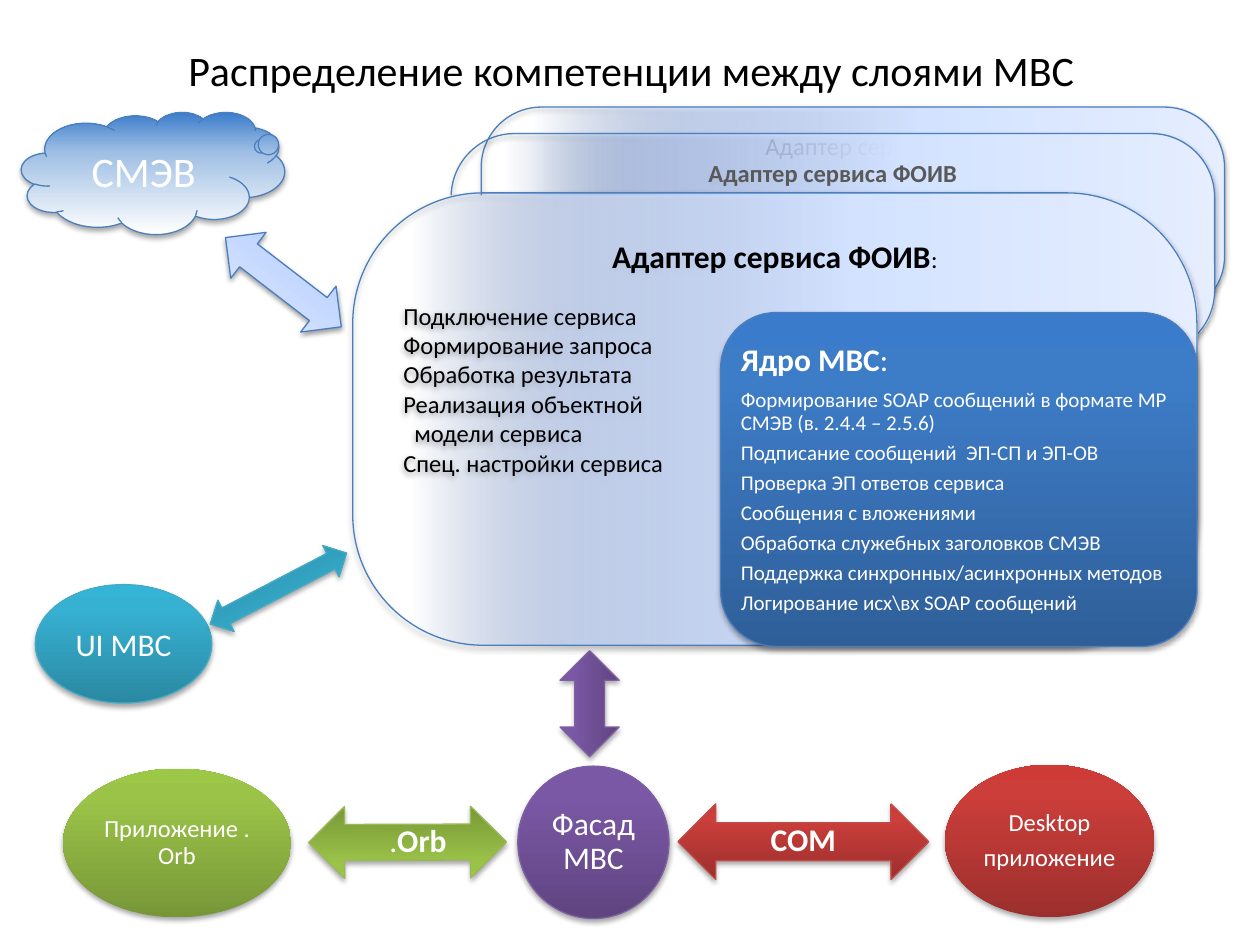
from dataclasses import dataclass

import lxml.etree
import pptx
import pptx.dml.color
import pptx.enum.shapes
import pptx.enum.text
import pptx.oxml.ns
import pptx.util

Pt = pptx.util.Pt
RGBColor = pptx.dml.color.RGBColor
Kind = pptx.enum.shapes.MSO_SHAPE
Anchor = pptx.enum.text.MSO_ANCHOR
Align = pptx.enum.text.PP_ALIGN
qn = pptx.oxml.ns.qn

FONT = "Calibri"
BLACK = RGBColor(0x00, 0x00, 0x00)
GRAY = RGBColor(0x59, 0x59, 0x59)
WHITE = RGBColor(0xFF, 0xFF, 0xFF)
BLUE_LINE = RGBColor(0x4B, 0x7E, 0xBC)
TEAL_LINE = RGBColor(0x46, 0xAA, 0xC5)
PURPLE_LINE = RGBColor(0x7D, 0x60, 0xA0)
RED_LINE = RGBColor(0xBF, 0x4C, 0x48)
GREEN_LINE = RGBColor(0x98, 0xB9, 0x55)
BLUE_DARK, BLUE, BLUE_LIGHT = (RGBColor.from_string(c) for c in ("2F5F99", "3D7CC7", "3A7CCB"))
TEAL_DARK, TEAL, TEAL_LIGHT = (RGBColor.from_string(c) for c in ("2A88A2", "37B1D2", "34B4D6"))
PURPLE_DARK, PURPLE, PURPLE_LIGHT = (RGBColor.from_string(c) for c in ("5F4480", "7B58A6", "7C57A8"))
RED_DARK, RED, RED_LIGHT = (RGBColor.from_string(c) for c in ("9C2F2D", "CB3E3A", "CE3B37"))
GREEN_DARK, GREEN, GREEN_LIGHT = (RGBColor.from_string(c) for c in ("779737", "9BC348", "9DC746"))
SKY, PALE, PALER, PALEST, CLOUD = (
    RGBColor.from_string(c) for c in ("A4C4FF", "BFD4FF", "D2E2FF", "E6EEFF", "A0BFE4"))


@dataclass(frozen=True)
class Stop:
    percent: int
    color: RGBColor
    opacity: int = 100


@dataclass(frozen=True)
class Look:
    stops: tuple[Stop, ...]
    line: RGBColor | None
    angle: int = 270
    shadow_opacity: int = 35
    shadow_distance: float = 1.8


@dataclass(frozen=True)
class Span:
    text: str
    size: float
    color: RGBColor = WHITE
    bold: bool = False


@dataclass(frozen=True)
class Para:
    spans: tuple[Span, ...]
    align: Align = Align.CENTER
    tight: bool = False
    after: float = 0
    indent: float = 0


@dataclass(frozen=True)
class Node:
    kind: Kind
    frame: tuple[float, float, float, float]
    look: Look
    paras: tuple[Para, ...] = ()
    adjust: tuple[float, ...] = ()
    rotation: float = 0
    anchor: Anchor = Anchor.MIDDLE
    insets: tuple[float, float, float, float] = (7.2, 3.6, 7.2, 3.6)


def solid_look(dark: RGBColor, middle: RGBColor, light: RGBColor,
               line: RGBColor | None, angle: int = 270) -> Look:
    return Look((Stop(0, dark), Stop(80, middle), Stop(100, light)), line, angle)


def tight(*spans: Span, align: Align = Align.CENTER) -> Para:
    return Para(spans, align, tight=True, after=round(0.35 * spans[0].size, 2))


def add_color(parent, color: RGBColor, opacity: int) -> None:
    element = lxml.etree.SubElement(parent, qn("a:srgbClr"), val=str(color))
    if opacity < 100:
        lxml.etree.SubElement(element, qn("a:alpha"), val=str(opacity * 1000))


def apply_look(shape, look: Look) -> None:
    # Gradient
    shape.fill.gradient()
    gradient = shape._element.spPr.find(qn("a:gradFill"))
    stop_list = gradient.find(qn("a:gsLst"))
    for old in list(stop_list):
        stop_list.remove(old)
    for stop in look.stops:
        element = lxml.etree.SubElement(stop_list, qn("a:gs"), pos=str(stop.percent * 1000))
        add_color(element, stop.color, stop.opacity)
    gradient.find(qn("a:lin")).set("ang", str(look.angle * 60000))
    # Outline
    if look.line is None:
        shape.line.fill.background()
    else:
        shape.line.color.rgb = look.line
        shape.line.width = Pt(0.75)
    # Shadow
    shape.shadow.inherit = False
    effects = shape._element.spPr.find(qn("a:effectLst"))
    shadow = lxml.etree.SubElement(
        effects, qn("a:outerShdw"), blurRad=str(Pt(3.1)),
        dist=str(Pt(look.shadow_distance)), dir="5400000", rotWithShape="0")
    add_color(shadow, BLACK, look.shadow_opacity)


def write(text_frame, paras: tuple[Para, ...], anchor: Anchor) -> None:
    text_frame.word_wrap = True
    text_frame.vertical_anchor = anchor
    for index, para in enumerate(paras):
        paragraph = text_frame.add_paragraph() if index else text_frame.paragraphs[0]
        paragraph.alignment = para.align
        paragraph.space_after = Pt(para.after)
        if para.tight:
            paragraph.line_spacing = 0.9
        if para.indent:
            paragraph._p.get_or_add_pPr().set("marL", str(Pt(para.indent)))
        for span in para.spans:
            run = paragraph.add_run()
            run.text = span.text
            run.font.name = FONT
            run.font.size = Pt(span.size)
            run.font.bold = span.bold
            run.font.color.rgb = span.color


def draw(page, node: Node) -> None:
    shape = page.shapes.add_shape(node.kind, *map(Pt, node.frame))
    shape.rotation = node.rotation
    for index, value in enumerate(node.adjust):
        shape.adjustments[index] = value
    apply_look(shape, node.look)
    if node.paras:
        frame = shape.text_frame
        frame.margin_left, frame.margin_top, frame.margin_right, frame.margin_bottom = map(Pt, node.insets)
        write(frame, node.paras, node.anchor)


GLASS = Look((Stop(7, SKY, 0), Stop(26, PALE, 60), Stop(59, PALER), Stop(100, PALEST)),
             BLUE_LINE, 0, 38, 1.6)
PALE_BLUE = Look((Stop(0, SKY), Stop(35, PALE), Stop(100, PALEST)), BLUE_LINE, 270, 38, 1.6)
SKY_CLOUD = Look((Stop(0, WHITE), Stop(67, CLOUD), Stop(100, BLUE_LIGHT)), BLUE_LINE)
BLUE_LOOK = solid_look(BLUE_DARK, BLUE, BLUE_LIGHT, BLUE_LINE)
TEAL_LOOK = solid_look(TEAL_DARK, TEAL, TEAL_LIGHT, TEAL_LINE)
PURPLE_LOOK = solid_look(PURPLE_DARK, PURPLE, PURPLE_LIGHT, PURPLE_LINE)
ARROW = Kind.LEFT_RIGHT_ARROW
CARD = Kind.ROUNDED_RECTANGLE
SMALL_INSETS = (1.5,) * 4
CORE_INSETS = (2.2,) * 4
ADAPTER = "Адаптер сервиса ФОИВ"

ADAPTER_TASKS = tuple(
    Para((Span(text, 14, BLACK),), Align.LEFT, indent=indent) for text, indent in (
        ("Подключение сервиса", 0), ("Формирование запроса", 0),
        ("Обработка результата", 0), ("Реализация объектной", 0),
        ("модели сервиса", 6.3), ("Спец. настройки сервиса", 0)))
CORE_TASKS = tuple(tight(Span(text, 12), align=Align.LEFT) for text in (
    "Формирование SOAP сообщений в формате МР СМЭВ (в. 2.4.4 – 2.5.6)",
    "Подписание сообщений  ЭП-СП и ЭП-ОВ",
    "Проверка ЭП ответов сервиса",
    "Сообщения с вложениями",
    "Обработка служебных заголовков СМЭВ",
    "Поддержка синхронных/асинхронных методов",
    "Логирование исх\\вх SOAP сообщений"))

BACK_CARDS = (
    Node(CARD, (275, 61.2, 424.8, 119.5), GLASS,
         (Para((Span("Адаптер сервиса", 14, BLACK),)),), (0.288,), anchor=Anchor.TOP),
    Node(CARD, (257.8, 76.3, 436.3, 126), GLASS,
         (Para((Span(ADAPTER, 14, GRAY, True),)),), (0.288,), anchor=Anchor.TOP),
)
FRONT_NODES = (
    # User interface and message exchange on the left
    Node(Kind.OVAL, (20.2, 334.1, 100.8, 67.7), TEAL_LOOK, (Para((Span("UI МВС", 18),)),)),
    Node(ARROW, (115.2, 326.2, 87.8, 20.2), TEAL_LOOK, rotation=152.5),
    Node(Kind.CLOUD_CALLOUT, (12.2, 64.1, 150.5, 69.8), SKY_CLOUD,
         (Para((Span("СМЭВ", 24),)),), (0.408, -0.218)),
    Node(ARROW, (120.2, 144.7, 83.5, 33.1), PALE_BLUE, rotation=217.6),
    # Front adapter card
    Node(CARD, (201.6, 110.2, 482.4, 258.5), GLASS,
         (Para((Span(ADAPTER, 18, BLACK, True), Span(":", 14, BLACK)), after=14.6),
          *ADAPTER_TASKS), (0.288,), anchor=Anchor.TOP),
    # Facade and its clients
    Node(Kind.OVAL, (295.9, 437.8, 86.4, 87.1), PURPLE_LOOK,
         (tight(Span("Фасад МВС", 18)),), insets=CORE_INSETS),
    Node(ARROW, (387.4, 459.4, 143.3, 43.2), solid_look(RED_DARK, RED, RED_LIGHT, RED_LINE),
         (tight(Span("COM", 18, bold=True)),), insets=(0, 0, 0, 0)),
    Node(Kind.OVAL, (540, 437, 119.5, 87.1), solid_look(RED_DARK, RED, RED_LIGHT, None),
         (tight(Span("Desktop", 14)), tight(Span("приложение", 14))), insets=SMALL_INSETS),
    Node(ARROW, (176.4, 460.8, 113, 41),
         solid_look(GREEN_DARK, GREEN, GREEN_LIGHT, GREEN_LINE, 90),
         (tight(Span(".", 18), Span("Orb", 18, bold=True)),),
         rotation=-0.2, insets=(12, 0, 0, 0)),
    Node(Kind.OVAL, (36, 439.2, 130.3, 85), solid_look(GREEN_DARK, GREEN, GREEN_LIGHT, None),
         (tight(Span("Приложение .Orb", 14)),), insets=SMALL_INSETS),
    Node(ARROW, (306.7, 385.2, 60.5, 33.8), PURPLE_LOOK, rotation=270),
    # Core
    Node(CARD, (411.8, 178.6, 272.2, 190.8), BLUE_LOOK,
         (tight(Span("Ядро МВС", 18, bold=True), Span(":", 18), align=Align.LEFT),
          *CORE_TASKS), insets=CORE_INSETS),
)


def main() -> None:
    deck = pptx.Presentation()
    deck.slide_width, deck.slide_height = Pt(720), Pt(540)
    page = deck.slides.add_slide(deck.slide_layouts[6])

    for node in BACK_CARDS:
        draw(page, node)

    # White backing that hides the rear cards
    backing = page.shapes.add_shape(CARD, Pt(178.6), Pt(111.6), Pt(505.4), Pt(257))
    backing.adjustments[0] = 0.292
    backing.fill.solid()
    backing.fill.fore_color.rgb = WHITE
    backing.line.fill.background()
    backing.shadow.inherit = False

    # Title
    title = page.shapes.add_textbox(Pt(36.7), Pt(15.1), Pt(648), Pt(49.7))
    heading = Span("Распределение компетенции между слоями МВС", 24, BLACK)
    write(title.text_frame, (Para((heading,)),), Anchor.MIDDLE)

    for node in FRONT_NODES:
        draw(page, node)
    deck.save("out.pptx")


if __name__ == "__main__":
    main()
